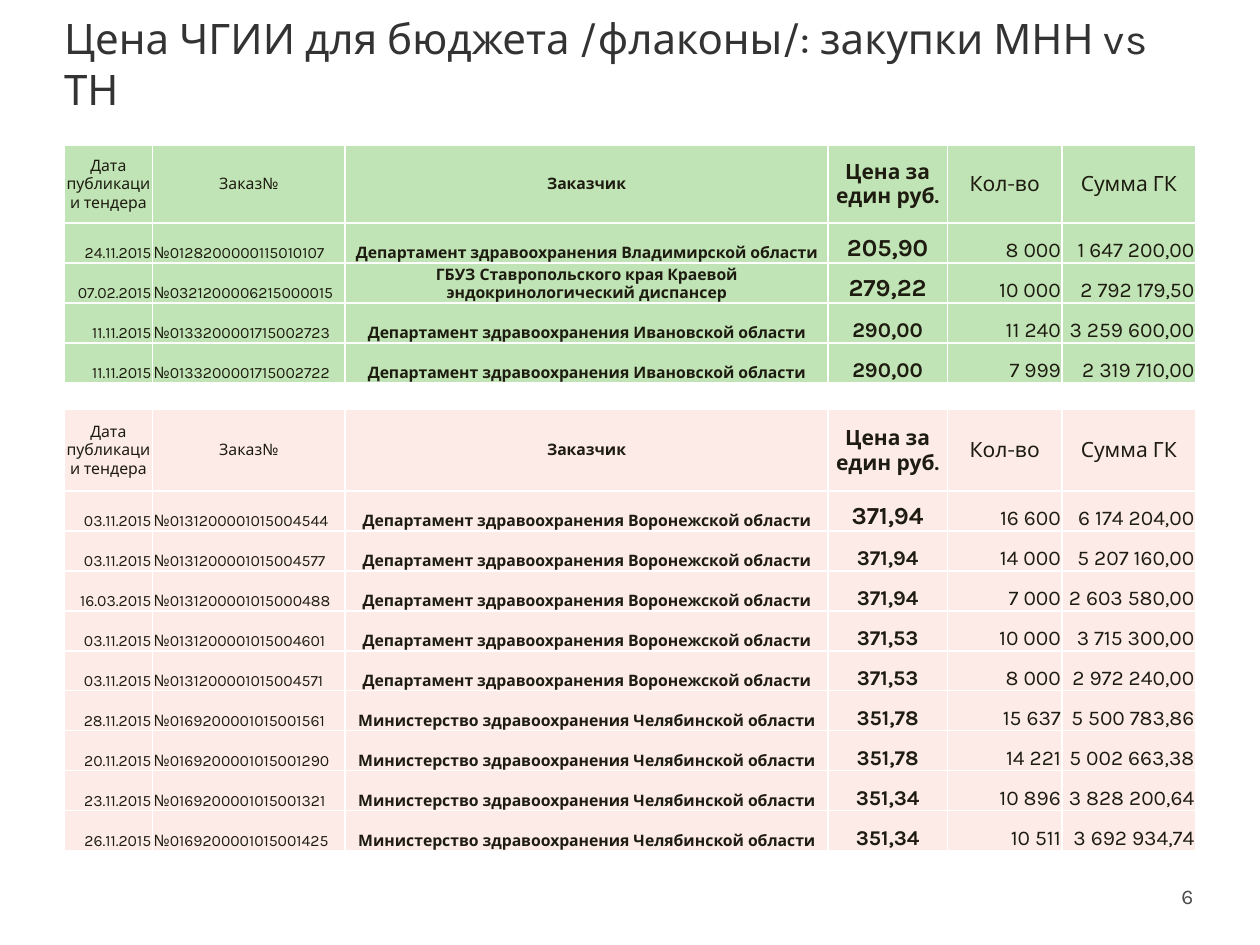
import pptx
import pptx.util
import pptx.oxml
import pptx.oxml.ns
import pptx.dml.color
import pptx.enum.text
import lxml.etree

ALIGN = pptx.enum.text.PP_ALIGN
ANCHOR = pptx.enum.text.MSO_ANCHOR
UNIT = 0.1  # grid of 100 columns by 75 rows, in inches

INK, WHITE = "1E1C11", "FFFFFF"
GREEN, PINK = "C0E4B5", "FCEBE7"


def size(n):
    return pptx.util.Inches(n * UNIT)


def tint(code):
    return pptx.dml.color.RGBColor.from_string(code)


def write(frame, text, pt=9, color=INK, bold=False, align=ALIGN.LEFT, font="Karla"):
    para = frame.paragraphs[0]
    para.alignment = align
    run = para.add_run()
    run.text = text
    run.font.name, run.font.size, run.font.bold = font, pptx.util.Pt(pt), bold
    run.font.color.rgb = tint(color)


class Deck:
    def __init__(self, cols=100, rows=75):
        self.file = pptx.Presentation()
        self.file.slide_width, self.file.slide_height = size(cols), size(rows)
        self.slide = self.file.slides.add_slide(self.file.slide_layouts[6])

    def text(self, spot, text, **style):
        frame = self.slide.shapes.add_textbox(*map(size, spot)).text_frame
        frame.word_wrap = True
        frame.vertical_anchor = ANCHOR.MIDDLE
        frame.margin_left = frame.margin_right = 0
        frame.margin_top = frame.margin_bottom = 0
        write(frame, text, **style)

    def table(self, left, top, cols, rows):
        frame = self.slide.shapes.add_table(
            len(rows), len(cols), size(left), size(top),
            size(sum(cols)), size(sum(rows)))
        grid = frame.table
        grid.first_row = grid.horz_banding = False
        for col, wide in zip(grid.columns, cols):
            col.width = size(wide)
        for row, high in zip(grid.rows, rows):
            row.height = size(high)
        return grid

    def cell(self, cell, fill, text="", anchor=ANCHOR.BOTTOM, **style):
        cell.fill.solid()
        cell.fill.fore_color.rgb = tint(fill)
        cell.margin_left = cell.margin_right = cell.margin_top = size(0.1)
        cell.margin_bottom = 0
        cell.vertical_anchor = anchor
        self.edge(cell)
        if text:
            write(cell.text_frame, text, **style)
        else:  # keep an empty row low
            end = lxml.etree.SubElement(
                cell.text_frame.paragraphs[0]._p, pptx.oxml.ns.qn("a:endParaRPr"))
            end.set("sz", "900")

    def edge(self, cell, color=WHITE, pt=1):
        props = cell._tc.get_or_add_tcPr()
        for i, side in enumerate("LRTB"):
            line = pptx.oxml.parse_xml(
                f'<a:ln{side} {pptx.oxml.ns.nsdecls("a")} w="{pptx.util.Pt(pt)}">'
                f'<a:solidFill><a:srgbClr val="{color}"/></a:solidFill></a:ln{side}>')
            props.insert(i, line)


HEAD = ["Дата публикации тендера", "Заказ№", "Заказчик",
        "Цена за един руб.", "Кол-во", "Сумма ГК"]
HEALTH = "Департамент здравоохранения {} области"
VLAD, IVAN, VORON = map(HEALTH.format, ("Владимирской", "Ивановской", "Воронежской"))
CHEL = "Министерство здравоохранения Челябинской области"
STAV = "ГБУЗ Ставропольского края Краевой эндокринологический диспансер"

LOW = [
    ("24.11.2015", "№0128200000115010107", VLAD, "205,90", "8 000", "1 647 200,00"),
    ("07.02.2015", "№0321200006215000015", STAV, "279,22", "10 000", "2 792 179,50"),
    ("11.11.2015", "№0133200001715002723", IVAN, "290,00", "11 240", "3 259 600,00"),
    ("11.11.2015", "№0133200001715002722", IVAN, "290,00", "7 999", "2 319 710,00"),
]
HIGH = [
    ("03.11.2015", "№0131200001015004544", VORON, "371,94", "16 600", "6 174 204,00"),
    ("03.11.2015", "№0131200001015004577", VORON, "371,94", "14 000", "5 207 160,00"),
    ("16.03.2015", "№0131200001015000488", VORON, "371,94", "7 000", "2 603 580,00"),
    ("03.11.2015", "№0131200001015004601", VORON, "371,53", "10 000", "3 715 300,00"),
    ("03.11.2015", "№0131200001015004571", VORON, "371,53", "8 000", "2 972 240,00"),
    ("28.11.2015", "№0169200001015001561", CHEL, "351,78", "15 637", "5 500 783,86"),
    ("20.11.2015", "№0169200001015001290", CHEL, "351,78", "14 221", "5 002 663,38"),
    ("23.11.2015", "№0169200001015001321", CHEL, "351,34", "10 896", "3 828 200,64"),
    ("26.11.2015", "№0169200001015001425", CHEL, "351,34", "10 511", "3 692 934,74"),
]

# Size, weight and alignment of each column
STYLE = [
    dict(pt=9, align=ALIGN.RIGHT),
    dict(pt=9, align=ALIGN.LEFT),
    dict(pt=9, bold=True, align=ALIGN.CENTER),
    dict(pt=12, bold=True, align=ALIGN.CENTER),
    dict(pt=12, align=ALIGN.RIGHT),
    dict(pt=12, align=ALIGN.RIGHT),
]
PRICE = 3


def block(deck, grid, top, fill, data, large):
    """Fill a header row and its data; the first `large` prices are bigger."""
    for col, (text, base) in enumerate(zip(HEAD, STYLE)):
        style = dict(base, align=ALIGN.CENTER, anchor=ANCHOR.MIDDLE)
        deck.cell(grid.cell(top, col), fill, text, **style)
    for i, row in enumerate(data):
        for col, (text, base) in enumerate(zip(row, STYLE)):
            style = dict(base, pt=14) if col == PRICE and i < large else base
            deck.cell(grid.cell(top + 1 + i, col), fill, text, **style)


def main():
    deck = Deck()

    # Title
    deck.text((5.1, 1.4, 89.6, 7.2),
              "Цена ЧГИИ для бюджета /флаконы/: закупки МНН vs ТН",
              pt=24, color="333333")

    # Tenders: low prices, an empty row, high prices
    line = 3.17
    rows = [6.2] + [line] * len(LOW) + [2.1, 6.5] + [line] * len(HIGH)
    grid = deck.table(5.1, 11.5, [7, 15.3, 38.3, 9.5, 9.1, 10.6], rows)
    gap = len(LOW) + 1
    block(deck, grid, 0, GREEN, LOW, large=2)
    for col in range(len(HEAD)):
        deck.cell(grid.cell(gap, col), WHITE)
    block(deck, grid, gap + 1, PINK, HIGH, large=1)

    # Page number
    deck.text((91.2, 69.9, 3.5, 2.4), "6", pt=12, color="4D4D4D", align=ALIGN.RIGHT)

    deck.file.save("out.pptx")


if __name__ == "__main__":
    main()
